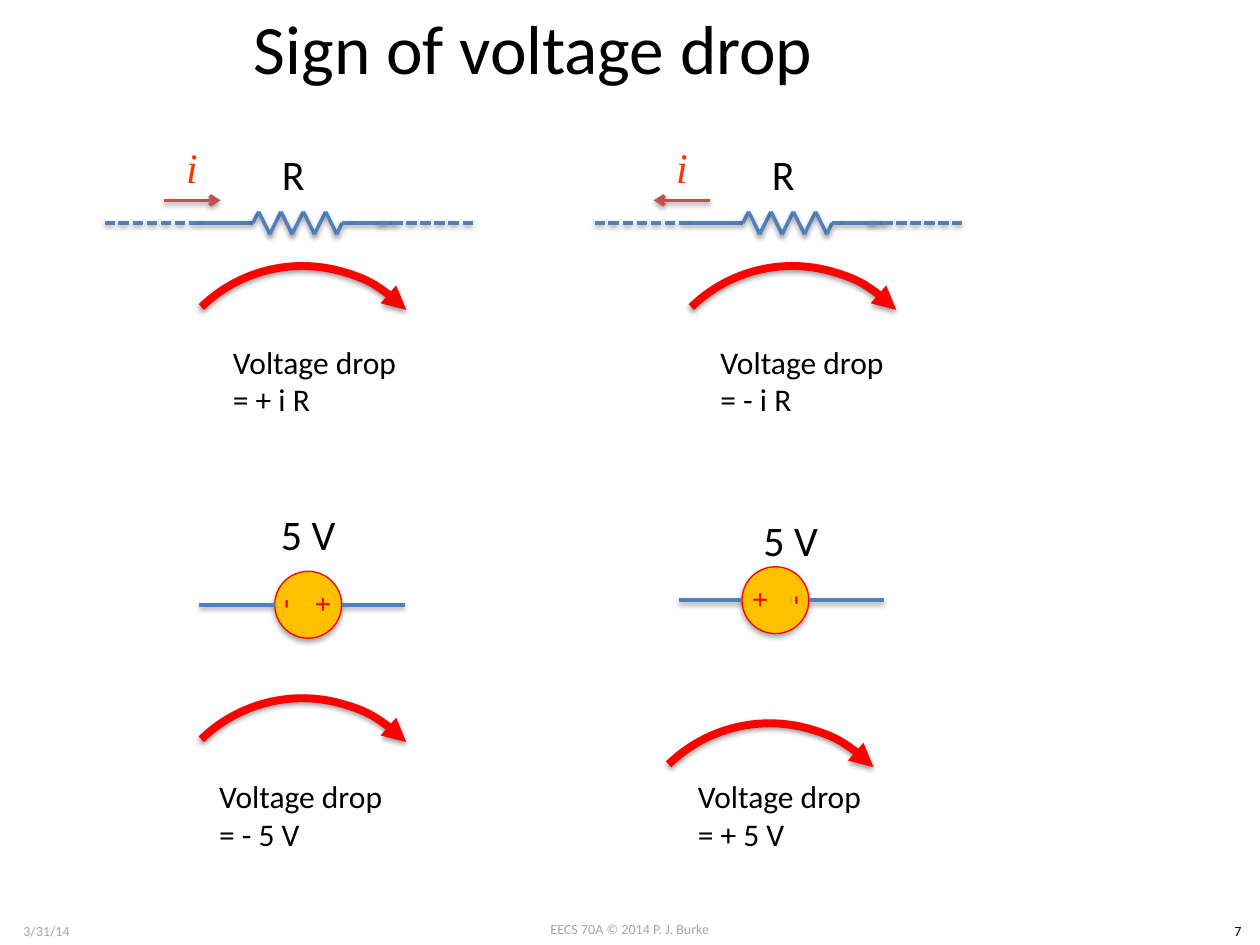
from dataclasses import dataclass
from itertools import pairwise
from lxml import etree
from pptx import Presentation
from pptx import util as u
from pptx.dml.color import RGBColor
from pptx.enum import dml, shapes, text
from pptx.oxml import ns

Pt = u.Pt
MID = text.PP_ALIGN.CENTER
LEFT = text.PP_ALIGN.LEFT


@dataclass(frozen=True)
class Theme:
    font: str = "Calibri"
    math: str = "Times New Roman"
    ink: str = "000000"
    gray: str = "A6A6A6"
    wire: str = "4F81BD"
    flow: str = "C0504D"
    sign: str = "FF3300"
    red: str = "FF0000"
    gold: str = "FFC000"
    title: float = 39.6
    label: float = 24
    body: float = 18
    plus: float = 16.6
    foot: float = 8


T = Theme()


def rgb(code):
    return RGBColor.from_string(code)


def node(up, tag, **attrs):
    return etree.SubElement(up, ns.qn(tag), {k: str(v) for k, v in attrs.items()})


def shade(item, alpha=38, dist=1.6):
    """Give a soft shadow straight below; call once the line is set."""
    fx = node(item._element.spPr, "a:effectLst")
    cast = node(fx, "a:outerShdw", blurRad=Pt(3.1), dist=Pt(dist),
                dir=5400000, rotWithShape=0)
    node(node(cast, "a:srgbClr", val=T.ink), "a:alpha", val=alpha * 1000)


def stroke(item, color, width, head=None, dash=None):
    item.line.color.rgb = rgb(color)
    item.line.width = Pt(width)
    if dash:
        item.line.dash_style = dash
    if head:
        node(item.line._get_or_add_ln(), "a:tailEnd", type=head)


def line(slide, start, end, color=T.wire, head=None, dash=None):
    item = slide.shapes.add_connector(
        shapes.MSO_CONNECTOR.STRAIGHT, *map(Pt, (*start, *end)))
    stroke(item, color, 2, head, dash)
    shade(item)


def write(frame, rows, size, color=T.ink, align=LEFT, font=T.font, slant=False):
    for n, row in enumerate(rows):
        para = frame.add_paragraph() if n else frame.paragraphs[0]
        para.alignment = align
        run = para.add_run()
        run.text = row
        run.font.size = Pt(size)
        run.font.name = font
        run.font.italic = slant
        run.font.color.rgb = rgb(color)


def label(slide, box, *rows, size=T.label, wrap=True, **look):
    item = slide.shapes.add_textbox(*map(Pt, box))
    item.text_frame.word_wrap = wrap
    write(item.text_frame, rows, size, **look)
    return item


def center(item):
    item.text_frame.vertical_anchor = text.MSO_ANCHOR.MIDDLE


def sweep(slide, x, y):
    """Draw the curved arrow that shows which way the drop is read."""
    item = slide.shapes.add_shape(
        shapes.MSO_SHAPE.ARC, *map(Pt, (x, y, 165.6, 165.6)))
    item.rotation = 315.8
    item.fill.background()
    stroke(item, T.red, 4.5, "triangle")
    shade(item)


def drop(slide, x, y, value):
    label(slide, (x, y, 108.7, 51), "Voltage drop", value, size=T.body, wrap=False)


def resist(slide, x, ahead):
    """Draw a resistor from x, with its current flowing ahead or back."""
    y, amp = 127.4, 6.4
    teeth = [(x + 87.8 + 6.38 * k, y + (amp if k % 2 else -amp)) for k in range(8)]
    chain = [(x + 54, y), (x + 78.5, y), (x + 84.5, y), *teeth,
             (x + 135.5, y), (x + 141.5, y), (x + 165.5, y)]
    for a, b in pairwise(chain):
        line(slide, a, b)
    for far, near in ((0, 54), (210, 156)):
        line(slide, (x + near, y), (x + far, y), dash=dml.MSO_LINE.SQUARE_DOT)
    label(slide, (x + 94, 81.4, 31.7, 36), "R")
    ends = [(x + 33.6, 114.5), (x + 66, 114.5)]
    line(slide, *(ends if ahead else ends[::-1]), color=T.flow, head="arrow")
    center(label(slide, (x + 22, 73.4, 55.4, 44), "i", color=T.sign,
                 align=MID, font=T.math, slant=True))


def source(slide, x, y, wires, signs, turn):
    """Draw a voltage source whose circle starts at x, centred on y."""
    side = 38.2
    ball = slide.shapes.add_shape(
        shapes.MSO_SHAPE.OVAL, *map(Pt, (x, y - side / 2, side, side)))
    ball.fill.solid()
    ball.fill.fore_color.rgb = rgb(T.gold)
    stroke(ball, T.red, 0.75)
    shade(ball, 35, 1.8)
    for sign, mid in zip(signs, (x + 9, x + 29)):
        item = label(slide, (mid - 9.4, y - 12, 18.8, 24), sign, color=T.red,
                     size=T.plus if sign == "+" else T.body, align=MID, wrap=False)
        frame = item.text_frame
        frame.margin_left = frame.margin_right = 0
        frame.margin_top = frame.margin_bottom = 0
        center(item)
        item.rotation = turn
    line(slide, (x - wires[0], y), (x, y))
    line(slide, (x + side, y), (x + side + wires[1], y))


def head(slide, words):
    item = slide.shapes.title
    item.left, item.top, item.width, item.height = map(Pt, (60, 0, 489.6, 54))
    item.text_frame.auto_size = text.MSO_AUTO_SIZE.NONE
    center(item)
    write(item.text_frame, [words], T.title, align=MID)


def foot(slide):
    for words, x, y, width, color in (
            ("EECS 70A © 2014 P. J. Burke", 276, 522.7, 168, T.gray),
            ("3/31/14", 0, 523.4, 53.3, T.gray),
            ("7", 694.8, 523.4, 25.2, T.ink)):
        label(slide, (x, y, width, 17), words, size=T.foot, color=color, align=MID)


def main():
    deck = Presentation()
    deck.slide_width, deck.slide_height = Pt(720), Pt(540)
    slide = deck.slides.add_slide(deck.slide_layouts[5])
    head(slide, "Sign of voltage drop")
    foot(slide)

    resist(slide, 60, True)
    resist(slide, 340, False)
    drop(slide, 126, 192.2, "= + i R")
    drop(slide, 404.6, 192.2, "= - i R")

    source(slide, 157, 345.6, (43, 36), "-+", 90)
    source(slide, 424, 343, (36, 43), "+-", 270)
    label(slide, (153.4, 287.3, 51.8, 36), "5 V")
    label(slide, (429.1, 290.2, 51.8, 36), "5 V")
    drop(slide, 118.1, 440.6, "= - 5 V")
    drop(slide, 391.7, 440.6, "= + 5 V")

    for x, y in ((90, 152), (370, 152), (90, 399), (357, 413.3)):
        sweep(slide, x, y)
    deck.save("out.pptx")


if __name__ == "__main__":
    main()
